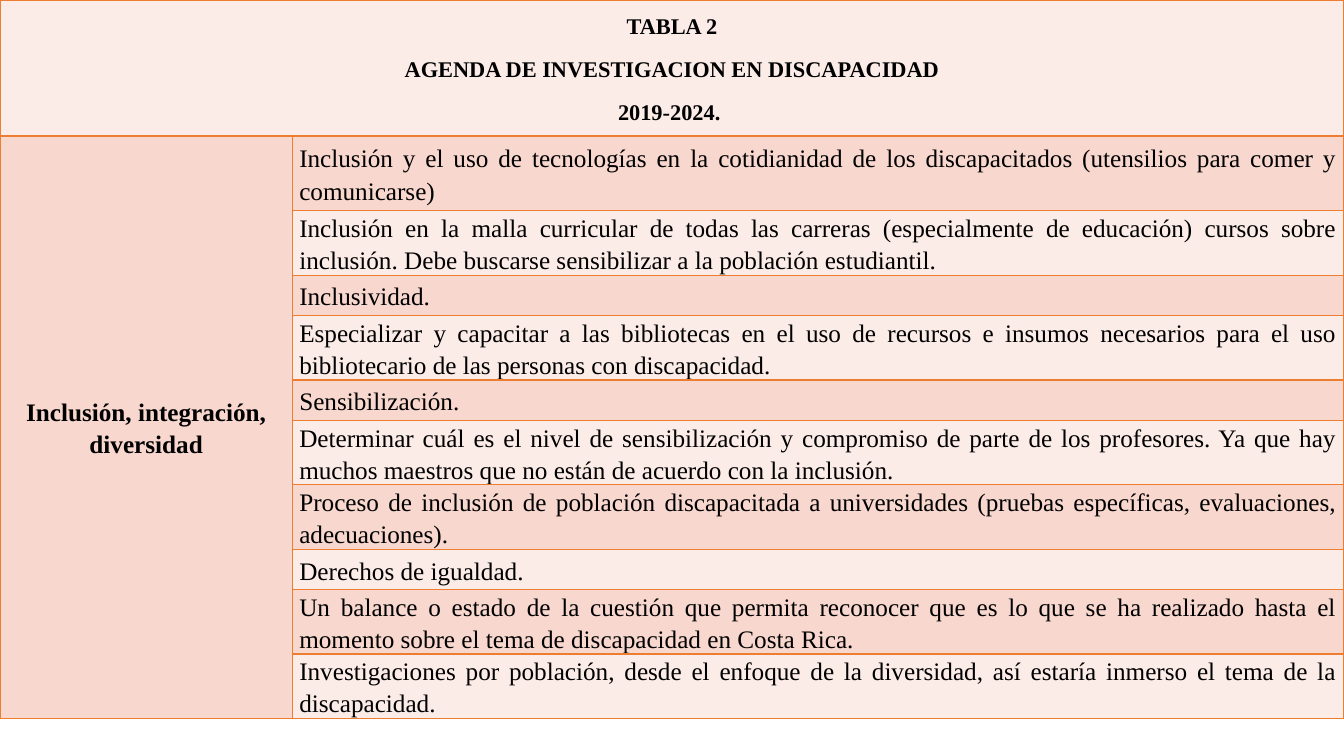
from dataclasses import dataclass

from lxml import etree
from pptx import Presentation
from pptx import util as u
from pptx.dml.color import RGBColor
from pptx.enum import text as t
from pptx.oxml import ns


@dataclass(frozen=True)
class Theme:
    font: str = "Times New Roman"
    ink: str = "000000"
    line: str = "ED7D31"
    pale: str = "FCECE8"
    rose: str = "F8D7CE"
    head: int = 16
    body: int = 18


@dataclass(frozen=True)
class Topic:
    text: str
    high: float


THEME = Theme()
WIDE, TALL = 960, 540
COLS = (208.8, 751.2)
HEAD, FIRST, TWO, ONE = 97.2, 53.28, 46.08, 28.8
FRAME = 522.72

TITLE = ("TABLA 2", "AGENDA DE INVESTIGACION EN DISCAPACIDAD", "2019-2024. ")
THEMA = "Inclusión, integración, diversidad"
TOPICS = (
    Topic("Inclusión y el uso de tecnologías en la cotidianidad de los discapacitados "
          "(utensilios para comer y comunicarse)", FIRST),
    Topic("Inclusión en la malla curricular de todas las carreras (especialmente de "
          "educación) cursos sobre inclusión. Debe buscarse sensibilizar a la población "
          "estudiantil.", TWO),
    Topic("Inclusividad.", ONE),
    Topic("Especializar y capacitar a las bibliotecas en el uso de recursos e insumos "
          "necesarios para el uso bibliotecario de las personas con discapacidad.", TWO),
    Topic("Sensibilización.", ONE),
    Topic("Determinar cuál es el nivel de sensibilización y compromiso de parte de los "
          "profesores. Ya que hay muchos maestros que no están de acuerdo con la "
          "inclusión.", TWO),
    Topic("Proceso de inclusión de población discapacitada a universidades (pruebas "
          "específicas, evaluaciones, adecuaciones).", TWO),
    Topic("Derechos de igualdad.", ONE),
    Topic("Un balance o estado de la cuestión que permita reconocer que es lo que se ha "
          "realizado hasta el momento sobre el tema de discapacidad en Costa Rica.", TWO),
    Topic("Investigaciones por población, desde el enfoque de la diversidad, así estaría "
          "inmerso el tema de la discapacidad.", TWO),
)


def style(cell, fill: str) -> None:
    """Set the borders, fill, margins and anchor of a cell."""
    props = cell._tc.get_or_add_tcPr()
    for side in ("a:lnL", "a:lnR", "a:lnT", "a:lnB"):
        line = etree.SubElement(props, ns.qn(side), w=str(u.Pt(1)))
        solid = etree.SubElement(line, ns.qn("a:solidFill"))
        etree.SubElement(solid, ns.qn("a:srgbClr"), val=THEME.line)
    cell.fill.solid()
    cell.fill.fore_color.rgb = RGBColor.from_string(fill)
    cell.margin_left = cell.margin_right = u.Pt(5)
    cell.margin_top = cell.margin_bottom = u.Pt(0)
    cell.vertical_anchor = t.MSO_ANCHOR.MIDDLE


def write(cell, *lines: str, size: int = THEME.body, bold: bool = False,
          align: t.PP_ALIGN = t.PP_ALIGN.CENTER) -> None:
    frame = cell.text_frame
    frame.text = "\n".join(lines)
    for para in frame.paragraphs:
        para.alignment = align
        para.line_spacing = 1.15
        para.space_after = u.Pt(10)
        for run in para.runs:
            font = run.font
            font.name, font.size, font.bold = THEME.font, u.Pt(size), bold
            font.color.rgb = RGBColor.from_string(THEME.ink)


def main() -> None:
    deck = Presentation()
    deck.slide_width, deck.slide_height = u.Pt(WIDE), u.Pt(TALL)
    slide = deck.slides.add_slide(deck.slide_layouts[6])

    highs = [HEAD] + [topic.high for topic in TOPICS]
    shape = slide.shapes.add_table(len(highs), len(COLS), u.Pt(0), u.Pt(0),
                                   u.Pt(WIDE), u.Pt(FRAME))
    table = shape.table
    for col, wide in zip(table.columns, COLS):
        col.width = u.Pt(wide)
    for row, high in zip(table.rows, highs):
        row.height = u.Pt(high)
    shape.height = u.Pt(FRAME)

    for i, row in enumerate(table.rows):
        band = THEME.rose if i % 2 else THEME.pale
        for j, cell in enumerate(row.cells):
            style(cell, THEME.rose if i and j == 0 else band)

    table.cell(0, 0).merge(table.cell(0, 1))
    table.cell(1, 0).merge(table.cell(len(TOPICS), 0))
    write(table.cell(0, 0), *TITLE, size=THEME.head, bold=True)
    write(table.cell(1, 0), THEMA, bold=True)
    for i, topic in enumerate(TOPICS, 1):
        write(table.cell(i, 1), topic.text, align=t.PP_ALIGN.JUSTIFY)

    deck.save("out.pptx")


if __name__ == "__main__":
    main()
